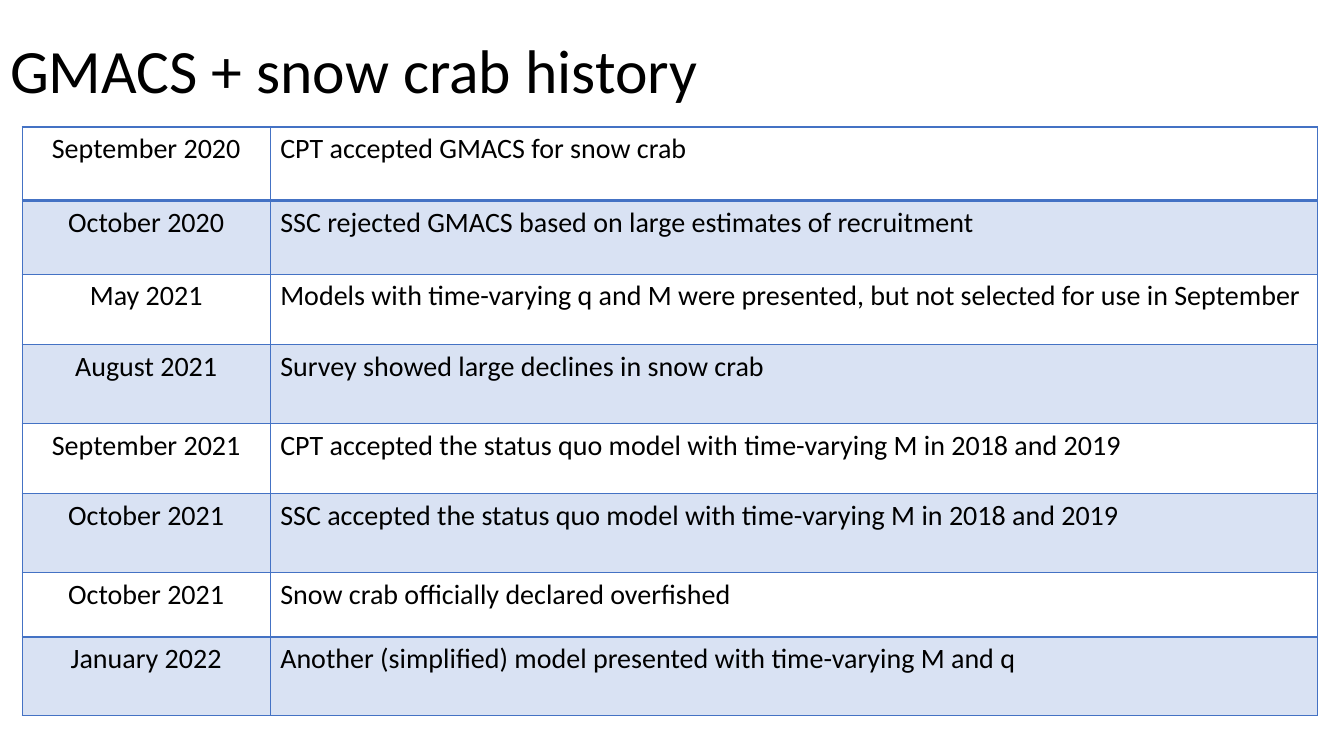
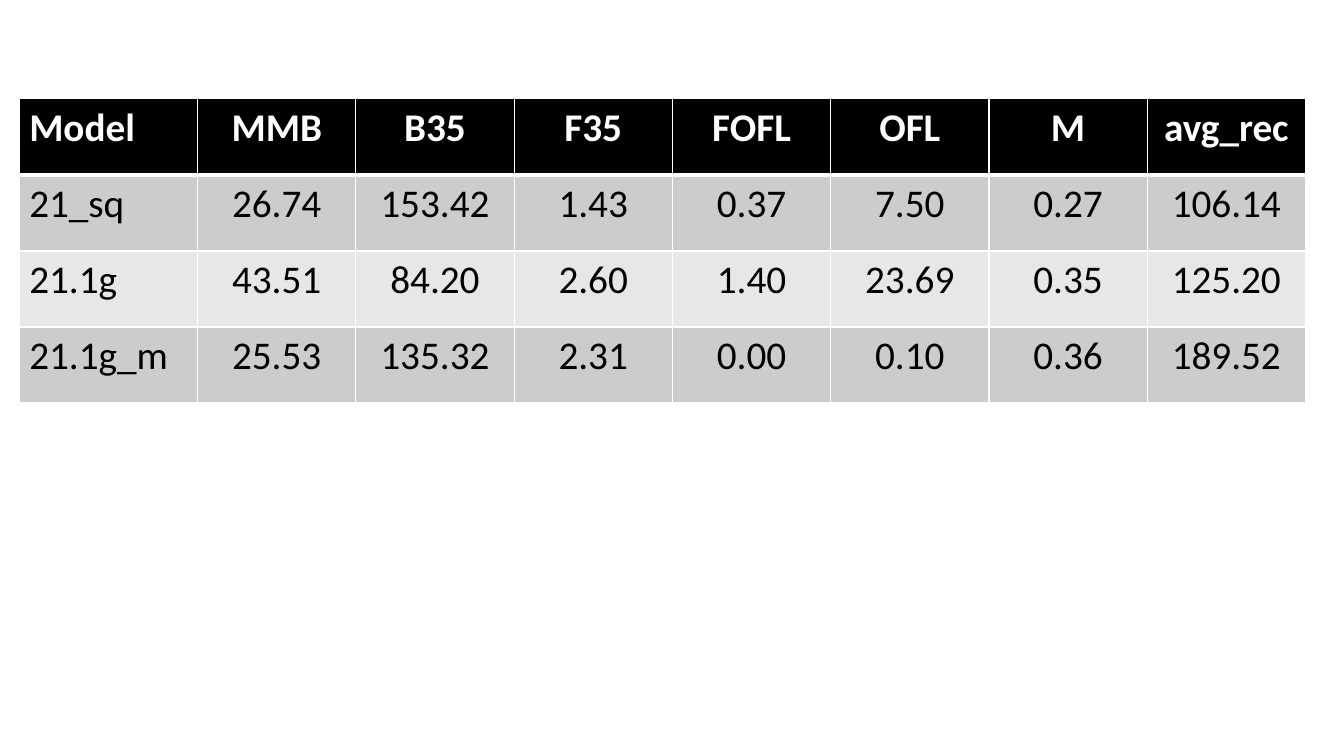
from dataclasses import dataclass

from lxml import etree
from pptx import Presentation
from pptx.dml.color import RGBColor
from pptx.enum import text
from pptx.oxml import ns
from pptx.util import Inches, Pt


@dataclass(frozen=True)
class Theme:
    """Colours, font and type sizes shared by the slides."""
    font: str = "Calibri"
    ink: str = "000000"
    paper: str = "FFFFFF"
    accent: str = "4472C4"
    dark_band: str = "CCCCCC"
    light_band: str = "E7E7E7"
    title_size: int = 44
    history_size: int = 20
    results_size: int = 28


THEME = Theme()

HISTORY = [
    ("September 2020", "CPT accepted GMACS for snow crab"),
    ("October 2020", "SSC rejected GMACS based on large estimates of recruitment"),
    ("May 2021", "Models with time-varying q and M were presented, but not selected for use in September"),
    ("August 2021", "Survey showed large declines in snow crab"),
    ("September 2021", "CPT accepted the status quo model with time-varying M in 2018 and 2019"),
    ("October 2021", "SSC accepted the status quo model with time-varying M in 2018 and 2019"),
    ("October 2021", "Snow crab officially declared overfished"),
    ("January 2022", "Another (simplified) model presented with time-varying M and q"),
]

RESULTS = [
    ("Model", "MMB", "B35", "F35", "FOFL", "OFL", "M", "avg_rec"),
    ("21_sq", "26.74", "153.42", "1.43", "0.37", "7.50", "0.27", "106.14"),
    ("21.1g", "43.51", "84.20", "2.60", "1.40", "23.69", "0.35", "125.20"),
    ("21.1g_m", "25.53", "135.32", "2.31", "0.00", "0.10", "0.36", "189.52"),
]


def style_text(paragraph, size, color, align, bold=False):
    """Format a whole paragraph in the theme font."""
    paragraph.alignment = align
    font = paragraph.font
    font.name, font.size, font.bold = THEME.font, Pt(size), bold
    font.color.rgb = RGBColor.from_string(color)


def fill_cell(cell, color, opacity=100):
    """Fill a cell, or leave it clear when there is no colour."""
    if color is None:
        cell.fill.background()
        return
    cell.fill.solid()
    cell.fill.fore_color.rgb = RGBColor.from_string(color)
    if opacity < 100:
        tint = cell._tc.tcPr.find(".//" + ns.qn("a:srgbClr"))
        etree.SubElement(tint, ns.qn("a:alpha"), val=str(opacity * 1000))


def border_cell(cell, color, top, bottom):
    """Draw the four borders of a cell, the sides one point wide."""
    properties = cell._tc.get_or_add_tcPr()
    edges = (("lnL", 1), ("lnR", 1), ("lnT", top), ("lnB", bottom))
    for place, (edge, width) in enumerate(edges):
        line = etree.Element(ns.qn("a:" + edge), w=str(Pt(width)))
        solid = etree.SubElement(line, ns.qn("a:solidFill"))
        etree.SubElement(solid, ns.qn("a:srgbClr"), val=color)
        properties.insert(place, line)


def add_grid(slide, box, entries, widths, heights, border, first_rule, header, style):
    """Add a table in a box; style(row, column, cell) sets fill and text."""
    grid = slide.shapes.add_table(len(entries), len(widths), *map(Inches, box)).table
    grid.first_row = header
    for column, width in zip(grid.columns, widths):
        column.width = Inches(width)
    for row, height in zip(grid.rows, heights):
        row.height = Inches(height)
    for r, entry in enumerate(entries):
        for c, words in enumerate(entry):
            cell = grid.cell(r, c)
            cell.text = words
            style(r, c, cell)
            border_cell(cell, border, first_rule if r == 1 else 1, first_rule if r == 0 else 1)


def add_title(slide, box, words):
    """Place and format the slide title."""
    title = slide.shapes.title
    title.left, title.top, title.width, title.height = map(Inches, box)
    title.text_frame.text = words
    title.text_frame.vertical_anchor = text.MSO_ANCHOR.MIDDLE
    heading = title.text_frame.paragraphs[0]
    heading.line_spacing = 0.9
    style_text(heading, THEME.title_size, THEME.ink, text.PP_ALIGN.LEFT)


def style_history(row, column, cell):
    """Tint every second event and centre the dates."""
    fill_cell(cell, THEME.accent if row % 2 else None, 20)
    align = text.PP_ALIGN.LEFT if column else text.PP_ALIGN.CENTER
    style_text(cell.text_frame.paragraphs[0], THEME.history_size, THEME.ink, align)


def style_results(row, column, cell):
    """Set a black header over grey bands and centre the figures."""
    header = row == 0
    band = THEME.dark_band if row % 2 else THEME.light_band
    fill_cell(cell, THEME.ink if header else band)
    align = text.PP_ALIGN.CENTER if column else text.PP_ALIGN.LEFT
    color = THEME.paper if header else THEME.ink
    style_text(cell.text_frame.paragraphs[0], THEME.results_size, color, align, header)


def history_slide(deck):
    """Build the dated history of decisions."""
    slide = deck.slides.add_slide(deck.slide_layouts[5])
    add_title(slide, (0, 0, 11.5, 1.45), "GMACS + snow crab history")
    heights = [0.73, 0.73, 0.7, 0.78, 0.7, 0.78, 0.64, 0.78]
    add_grid(slide, (0.22, 1.26, 12.85, sum(heights)), HISTORY, [2.46, 10.39], heights,
             THEME.accent, 2, False, style_history)


def results_slide(deck):
    """Build the comparison of model results."""
    slide = deck.slides.add_slide(deck.slide_layouts[6])
    widths = [1.77] + [1.57] * 7
    heights = [0.755] * len(RESULTS)
    add_grid(slide, (0.19, 0.98, sum(widths), sum(heights)), RESULTS, widths, heights,
             THEME.paper, 3, True, style_results)


def main():
    """Build and save the deck."""
    deck = Presentation()
    deck.slide_width, deck.slide_height = Inches(13.33), Inches(7.5)
    history_slide(deck)
    results_slide(deck)
    deck.save("out.pptx")


if __name__ == "__main__":
    main()
